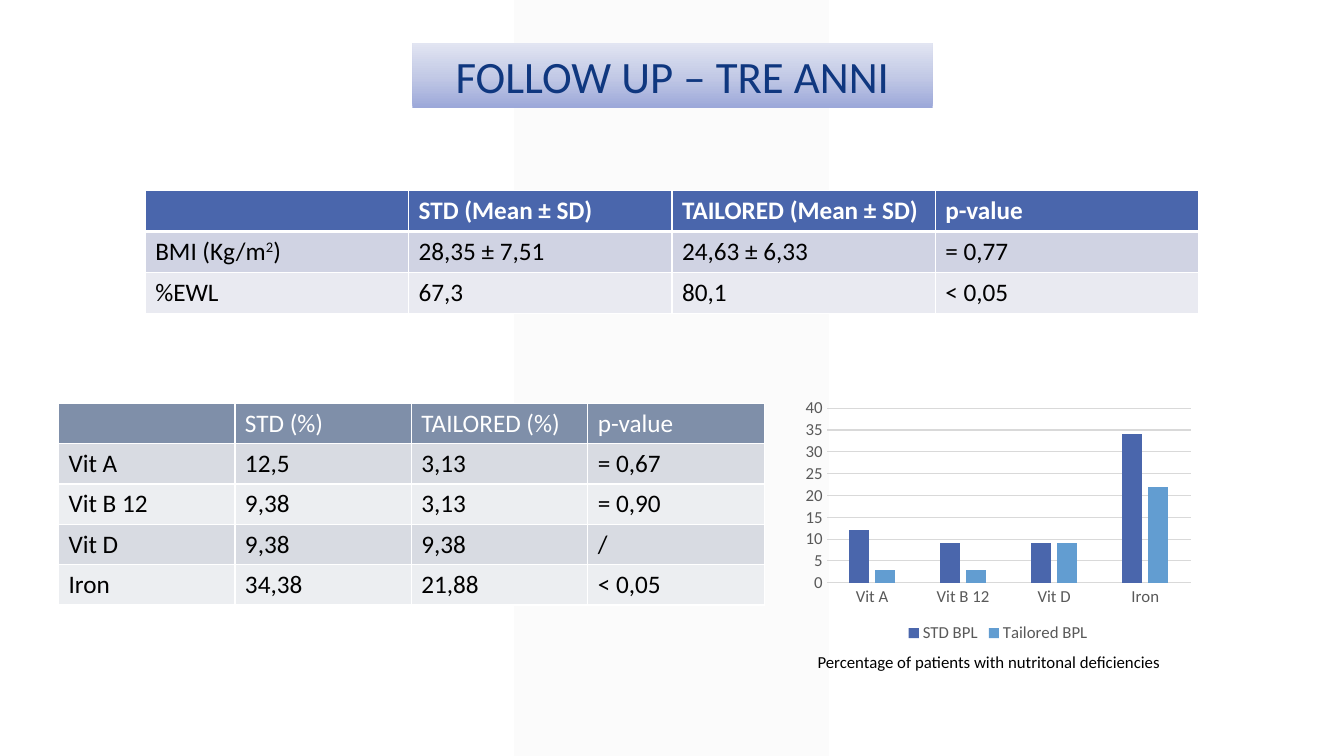
from lxml.etree import SubElement
from pptx import Presentation
from pptx.chart.data import CategoryChartData
from pptx.dml.color import RGBColor
from pptx.enum.chart import XL_CHART_TYPE, XL_LEGEND_POSITION, XL_TICK_MARK
from pptx.enum.shapes import MSO_SHAPE
from pptx.enum.text import MSO_ANCHOR, PP_ALIGN
from pptx.oxml.ns import qn
from pptx.util import Inches, Pt

FONT = "Calibri"
COLORS = {
    "white": "FFFFFF", "black": "000000", "title": "0F377F", "band": "F2F2F2",
    "blue": "4A66AC", "blue_odd": "D0D3E3", "blue_even": "E9EAF1",
    "gray": "7F8FA9", "gray_odd": "D8DBE2", "gray_even": "ECEEF1",
    "light_blue": "629DD1", "axis_text": "595959", "grid": "D9D9D9",
    "grad_bottom": "9CA8D9", "grad_middle": "C3CAE6", "grad_top": "E2E5F2",
}
OUTCOMES = [
    ["", "STD (Mean ± SD)", "TAILORED (Mean ± SD)", "p-value"],
    [("BMI (Kg/m", "2", ")"), "28,35 ± 7,51", "24,63 ± 6,33", "= 0,77"],
    ["%EWL", "67,3", "80,1", "< 0,05"],
]
DEFICIENCIES = [
    ["", "STD (%)", "TAILORED (%)", "p-value"],
    ["Vit A", "12,5", "3,13", "= 0,67"],
    ["Vit B 12", "9,38", "3,13", "= 0,90"],
    ["Vit D", "9,38", "9,38", "/"],
    ["Iron", "34,38", "21,88", "< 0,05"],
]


def rgb(name):
    return RGBColor.from_string(COLORS[name])


def box(left, top, width, height):
    return [Inches(v) for v in (left, top, width, height)]


def set_font(font, size, color, bold=False):
    for key, value in {"name": FONT, "size": Pt(size), "bold": bold}.items():
        setattr(font, key, value)
    font.color.rgb = rgb(color)


def add_color(parent, color):
    return SubElement(parent, qn("a:srgbClr"), val=COLORS[color])


def add_band(slide):
    sp = slide.shapes.add_shape(MSO_SHAPE.RECTANGLE, *box(5.1, 0, 3.12, 7.5))
    sp.shadow.inherit = False
    sp.line.fill.background()
    sp.fill.solid()
    sp.fill.fore_color.rgb = rgb("band")
    color = sp._element.spPr.find(qn("a:solidFill"))[0]
    SubElement(color, qn("a:alpha"), val="30000")
    slide.shapes._spTree.insert(2, sp._element)  # behind the title


def format_title(slide, text):
    sp = slide.shapes.title
    sp.left, sp.top, sp.width, sp.height = box(4.09, 0.43, 5.16, 0.64)
    grad = SubElement(sp._element.spPr, qn("a:gradFill"), rotWithShape="1")
    stops = SubElement(grad, qn("a:gsLst"))
    for i, color in enumerate(("grad_bottom", "grad_middle", "grad_top")):
        add_color(SubElement(stops, qn("a:gs"), pos=str(i * 50000)), color)
    SubElement(grad, qn("a:lin"), ang="16200000", scaled="0")
    tf = sp.text_frame
    tf.vertical_anchor = MSO_ANCHOR.MIDDLE
    p = tf.paragraphs[0]
    p.alignment = PP_ALIGN.CENTER
    r = p.add_run()
    r.text = text
    set_font(r.font, 32, "title")


def set_borders(cell, top, bottom):
    tc_pr = cell._tc.get_or_add_tcPr()
    for side, width in {"L": 1, "R": 1, "T": top, "B": bottom}.items():
        ln = SubElement(tc_pr, qn(f"a:ln{side}"), w=str(Pt(width)))
        add_color(SubElement(ln, qn("a:solidFill")), "white")


def fill_cell(cell, content, color, bold):
    """Write a string, or a tuple whose every second part is superscript."""
    parts = (content,) if isinstance(content, str) else content
    p = cell.text_frame.paragraphs[0]
    set_font(p.font, 18, color, bold)
    for i, part in enumerate(parts):
        r = p.add_run()
        r.text = part
        set_font(r.font, 18, color, bold)
        if i % 2:
            r._r.get_or_add_rPr().set("baseline", "30000")


def add_data_table(slide, rows, place, theme, header_rule, bold_header):
    table = slide.shapes.add_table(len(rows), len(rows[0]), *box(*place)).table
    for i, row in enumerate(rows):
        header = i == 0
        fill = theme if header else theme + ("_odd" if i % 2 else "_even")
        for j, content in enumerate(row):
            cell = table.cell(i, j)
            set_borders(cell, header_rule if i == 1 else 1,
                        header_rule if header else 1)
            cell.fill.solid()
            cell.fill.fore_color.rgb = rgb(fill)
            fill_cell(cell, content, "white" if header else "black",
                      header and bold_header)


def add_deficiency_chart(slide):
    rows = DEFICIENCIES[1:]
    data = CategoryChartData()
    data.categories = [row[0] for row in rows]
    for column, name in enumerate(("STD BPL", "Tailored BPL"), 1):
        data.add_series(name, [round(float(row[column].replace(",", ".")))
                               for row in rows])
    chart = slide.shapes.add_chart(XL_CHART_TYPE.COLUMN_CLUSTERED,
                                   *box(7.91, 3.9, 3.98, 2.52), data).chart
    set_font(chart.font, 10, "black")
    chart.has_title = False
    chart.has_legend = True
    legend = chart.legend
    legend.position = XL_LEGEND_POSITION.BOTTOM
    legend.include_in_layout = False
    set_font(legend.font, 12, "axis_text")
    category, value = chart.category_axis, chart.value_axis
    for axis in (category, value):
        axis.major_tick_mark = axis.minor_tick_mark = XL_TICK_MARK.NONE
        set_font(axis.tick_labels.font, 12, "axis_text")
    value.minimum_scale, value.maximum_scale, value.major_unit = 0, 40, 5
    value.format.line.fill.background()
    for line in (category.format.line, value.major_gridlines.format.line):
        line.width = Pt(0.75)
        line.color.rgb = rgb("grid")
    plot = chart.plots[0]
    plot.gap_width, plot.overlap, plot.vary_by_categories = 219, -27, False
    for series, color in zip(plot.series, ("blue", "light_blue")):
        series.format.fill.solid()
        series.format.fill.fore_color.rgb = rgb(color)


def add_caption(slide, text):
    tf = slide.shapes.add_textbox(*box(8.01, 6.42, 5.32, 0.61)).text_frame
    tf.word_wrap = True
    r = tf.paragraphs[0].add_run()
    r.text = text
    set_font(r.font, 12, "black")


def main():
    prs = Presentation()
    prs.slide_width, prs.slide_height = Inches(13.33), Inches(7.5)
    slide = prs.slides.add_slide(prs.slide_layouts[5])
    add_band(slide)
    format_title(slide, "FOLLOW UP – TRE ANNI")
    add_data_table(slide, OUTCOMES, (1.44, 1.89, 10.45, 1.2), "blue", 3, True)
    add_deficiency_chart(slide)
    add_caption(slide, "Percentage of patients with nutritonal deficiencies")
    add_data_table(slide, DEFICIENCIES, (0.58, 4, 7, 2), "gray", 1, False)
    prs.save("out.pptx")


if __name__ == "__main__":
    main()
